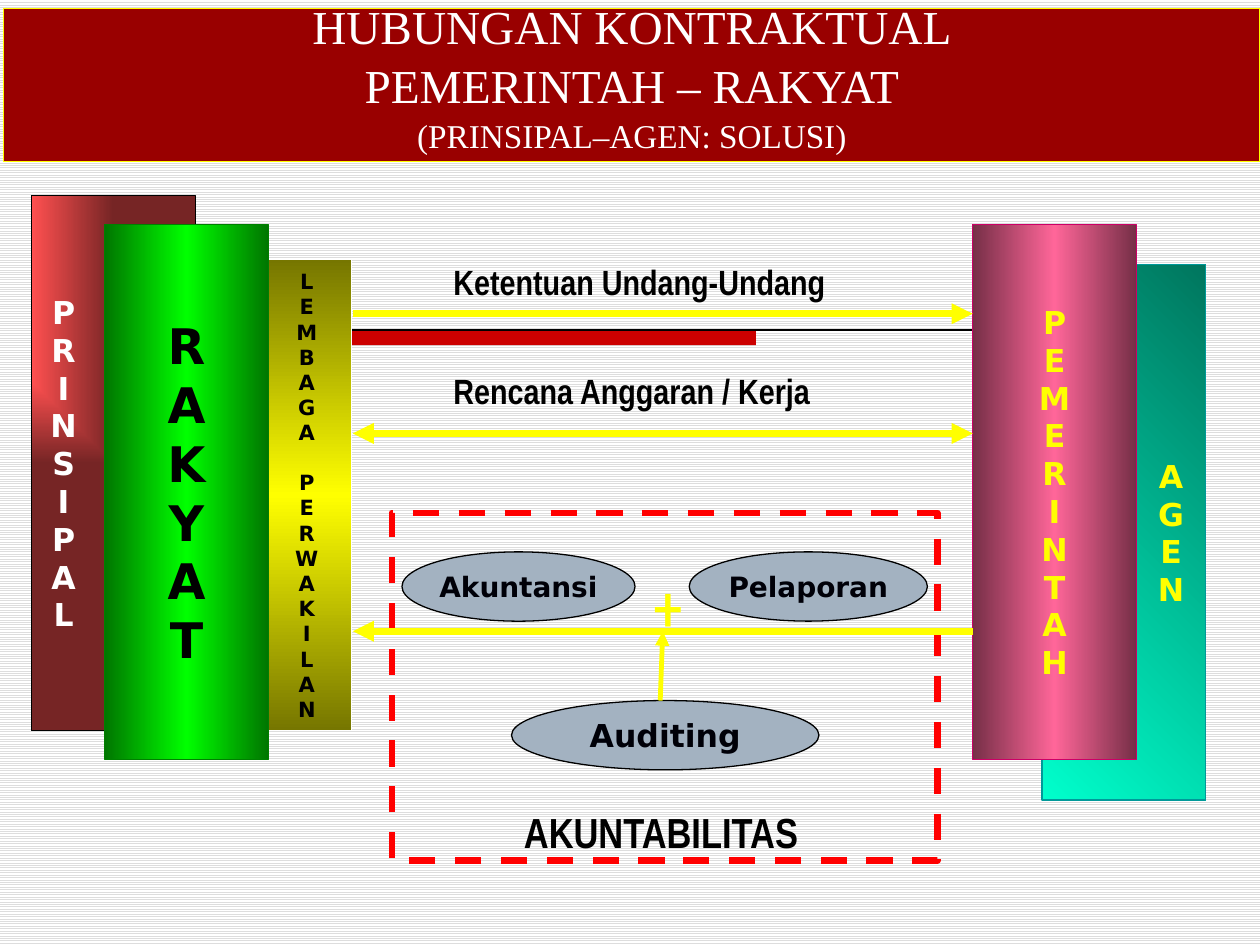
"""Build the slide on the contractual relation between government and people."""
from dataclasses import dataclass
from typing import Optional

import lxml.etree
import pptx
import pptx.dml.color
import pptx.enum.dml
import pptx.enum.shapes
import pptx.enum.text
import pptx.oxml
import pptx.oxml.ns
import pptx.util

Inches, Pt = pptx.util.Inches, pptx.util.Pt
Shape = pptx.enum.shapes.MSO_SHAPE
Align = pptx.enum.text.PP_ALIGN
Anchor = pptx.enum.text.MSO_ANCHOR
qn = pptx.oxml.ns.qn

COLORS = {
    "white": "FFFFFF", "black": "000000", "hatch": "DDDDDD", "yellow": "FFFF00",
    "title": "990000", "bar": "CC0000", "dash": "FF0000", "ellipse": "A3B2C1",
    "ink": "000008", "gold": "767600", "coral": "FF5050", "maroon": "762525",
    "forest": "007600", "lime": "00FF00", "green": "008000", "aqua": "00FFCC",
    "pine": "00765E", "teal": "009999", "plum": "762F47", "pink": "FF6699",
    "magenta": "CC0066",
}
MARGINS = ("margin_left", "margin_top", "margin_right", "margin_bottom")


@dataclass
class Block:
    box: tuple
    fill: tuple = ()
    line: str = "black"
    text: str = ""
    size: float = 18
    color: str = "black"
    angle: Optional[int] = None
    insets: tuple = (0.1, 0.05, 0.1, 0.05)
    kind: Shape = Shape.RECTANGLE
    stacked: bool = True


@dataclass
class Arrow:
    start: tuple
    end: tuple
    width: float = 4
    color: str = "yellow"
    heads: tuple = ()


@dataclass
class Label:
    box: tuple
    text: str
    size: float = 20
    font: str = "Arial Narrow"
    color: str = "black"
    bold: bool = True
    wrap: bool = True
    align: Align = Align.LEFT


def rgb(name: str) -> pptx.dml.color.RGBColor:
    """Return the named colour."""
    return pptx.dml.color.RGBColor.from_string(COLORS[name])


def apply(target, values: dict) -> None:
    """Set each attribute of the target."""
    for attribute, value in values.items():
        setattr(target, attribute, value)


def style_run(run, size: float, font: str, color: str, bold: bool) -> None:
    """Format one run."""
    apply(run.font, {"size": Pt(size), "name": font, "bold": bold})
    run.font.color.rgb = rgb(color)


def add_gradient(shape, names: tuple, angle: Optional[int]) -> None:
    """Fill a shape with evenly spaced stops, from a corner if no angle is given."""
    gradient = pptx.oxml.parse_xml(f'<a:gradFill {pptx.oxml.ns.nsdecls("a")} rotWithShape="1"/>')
    stops = lxml.etree.SubElement(gradient, qn("a:gsLst"))
    for index, name in enumerate(names):
        position = str(100000 * index // (len(names) - 1))
        stop = lxml.etree.SubElement(stops, qn("a:gs"), pos=position)
        lxml.etree.SubElement(stop, qn("a:srgbClr"), val=COLORS[name])
    if angle is None:
        focus = lxml.etree.SubElement(gradient, qn("a:path"), attrib={"path": "rect"})
        lxml.etree.SubElement(focus, qn("a:fillToRect"), r="100000", b="100000")
    else:
        lxml.etree.SubElement(gradient, qn("a:lin"), ang=str(angle * 60000), scaled="1")
    shape.element.spPr.find(qn("a:prstGeom")).addnext(gradient)


def add_block(slide, block: Block):
    """Draw a filled shape with its text, one letter a line when stacked."""
    shape = slide.shapes.add_shape(block.kind, *map(Inches, block.box))
    shape.shadow.inherit = False
    if len(block.fill) > 1:
        add_gradient(shape, block.fill, block.angle)
    elif block.fill:
        shape.fill.solid()
        shape.fill.fore_color.rgb = rgb(block.fill[0])
    else:
        shape.fill.background()
    shape.line.color.rgb = rgb(block.line)
    shape.line.width = Pt(0.75)
    frame = shape.text_frame
    apply(frame, {"word_wrap": False, "vertical_anchor": Anchor.MIDDLE})
    apply(frame, dict(zip(MARGINS, map(Inches, block.insets))))
    paragraph = frame.paragraphs[0]
    for word_index, word in enumerate(block.text.split()):
        for index, piece in enumerate(word if block.stacked else [word]):
            if word_index or index:
                paragraph = frame.add_paragraph()
            if word_index and not index:
                paragraph.space_before = Pt(block.size * 1.17)
            paragraph.alignment = Align.CENTER
            run = paragraph.add_run()
            run.text = piece
            style_run(run, block.size, "DejaVu Sans", block.color, True)
    return shape


def add_arrow(slide, arrow: Arrow) -> None:
    """Draw a straight line with its arrowheads."""
    connector = slide.shapes.add_connector(
        pptx.enum.shapes.MSO_CONNECTOR.STRAIGHT, *map(Inches, arrow.start + arrow.end))
    connector.line.color.rgb = rgb(arrow.color)
    connector.line.width = Pt(arrow.width)
    for end in arrow.heads:
        lxml.etree.SubElement(connector.line._get_or_add_ln(), qn(f"a:{end}"), type="triangle")
    lxml.etree.SubElement(connector.element.spPr, qn("a:effectLst"))


def add_label(slide, label: Label) -> None:
    """Draw a line of free text."""
    frame = slide.shapes.add_textbox(*map(Inches, label.box)).text_frame
    frame.word_wrap = label.wrap
    frame.paragraphs[0].alignment = label.align
    run = frame.paragraphs[0].add_run()
    run.text = label.text
    style_run(run, label.size, label.font, label.color, label.bold)


def add_title(slide) -> None:
    """Draw the title banner."""
    banner = add_block(slide, Block((0.03, 0.07, 9.97, 1.21), ("title",), "yellow"))
    apply(banner.text_frame, {"word_wrap": True, "vertical_anchor": Anchor.BOTTOM})
    heading = banner.text_frame.paragraphs[0]
    apply(heading, {"alignment": Align.CENTER, "line_spacing": 1.05})
    lines = (("HUBUNGAN KONTRAKTUAL", 27), ("PEMERINTAH – RAKYAT", 27),
             ("(PRINSIPAL–AGEN: SOLUSI)", 19))
    for index, (text, size) in enumerate(lines):
        if index:
            heading.add_line_break()
        run = heading.add_run()
        run.text = text
        style_run(run, size, "Times New Roman", "white", False)


def ellipse(box: tuple, text: str, size: float = 16) -> Block:
    """Describe one accounting activity."""
    return Block(box, ("ellipse",), text=text, size=size, color="ink",
                 kind=Shape.OVAL, stacked=False)


PILLAR = (1.3, 4.25)
LEFT, RIGHT = 2.8, 7.72
COUNCIL = Block((1.61, 2.06, 1.18, 3.74), ("gold", "yellow", "gold"), "white",
                "LEMBAGA PERWAKILAN", 12, angle=90, insets=(0.53, 0.05, 0.06, 0.05))
ACTIVITIES = [ellipse((3.19, 4.38, 1.85, 0.55), "Akuntansi"),
              ellipse((5.47, 4.38, 1.89, 0.55), "Pelaporan"),
              ellipse((4.06, 5.56, 2.44, 0.55), "Auditing", 18)]
PARTIES = [
    Block((0.25, 1.55, *PILLAR), ("coral", "maroon"), "black", "PRINSIPAL", 18, "white",
          insets=(0.02, 0.05, 0.81, 0.05)),
    Block((0.83, 1.78, *PILLAR), ("forest", "lime", "forest"), "green", "RAKYAT", 28, angle=0),
    Block((8.27, 2.1, *PILLAR), ("aqua", "pine"), "teal", "AGEN", 18, "yellow", 315,
          (0.81, 0.05, 0.06, 0.05)),
    Block((7.72, 1.78, *PILLAR), ("plum", "pink", "plum"), "magenta", "PEMERINTAH", 18,
          "yellow", 0),
]
ARROWS = [
    Arrow((LEFT, 2.49), (RIGHT, 2.49), heads=("tailEnd",)),
    Arrow((LEFT, 3.44), (RIGHT, 3.44), heads=("headEnd", "tailEnd")),
    Arrow((LEFT, 5.01), (RIGHT, 5.01), heads=("headEnd",)),
    Arrow((5.26, 5.01), (5.24, 5.56), 2.75, heads=("headEnd",)),
]
LABELS = [
    Label((3.5, 2.02, 3.39, 0.43), "Ketentuan Undang-Undang"),
    Label((3.5, 2.88, 3.39, 0.43), "Rencana Anggaran / Kerja"),
    Label((5.08, 4.46, 0.31, 0.39), "+", 36, "Roboto Condensed", "yellow", False, False,
          Align.CENTER),
    Label((4.06, 6.35, 2.52, 0.5), "AKUNTABILITAS", 24),
]


def main() -> None:
    """Build and save the slide."""
    deck = pptx.Presentation()
    apply(deck, {"slide_width": Inches(10), "slide_height": Inches(7.5)})
    slide = deck.slides.add_slide(deck.slide_layouts[6])
    backdrop = slide.background.fill
    backdrop.patterned()
    backdrop.pattern = pptx.enum.dml.MSO_PATTERN.LIGHT_HORIZONTAL
    backdrop.fore_color.rgb = rgb("hatch")
    backdrop.back_color.rgb = rgb("white")
    bar = add_block(slide, Block((0.75, 2.62, 5.25, 0.12), ("bar",)))
    bar.line.fill.background()
    add_arrow(slide, Arrow((0.75, 2.62), (9.25, 2.62), 0.75, "black"))
    add_block(slide, COUNCIL)
    add_title(slide)
    for activity in ACTIVITIES:
        add_block(slide, activity)
    scope = add_block(slide, Block((3.11, 4.07, 4.33, 2.76), line="dash"))
    apply(scope.line, {"width": Pt(3.75), "dash_style": pptx.enum.dml.MSO_LINE.DASH})
    for party in PARTIES:
        add_block(slide, party)
    for arrow in ARROWS:
        add_arrow(slide, arrow)
    for label in LABELS:
        add_label(slide, label)
    deck.save("out.pptx")


if __name__ == "__main__":
    main()
